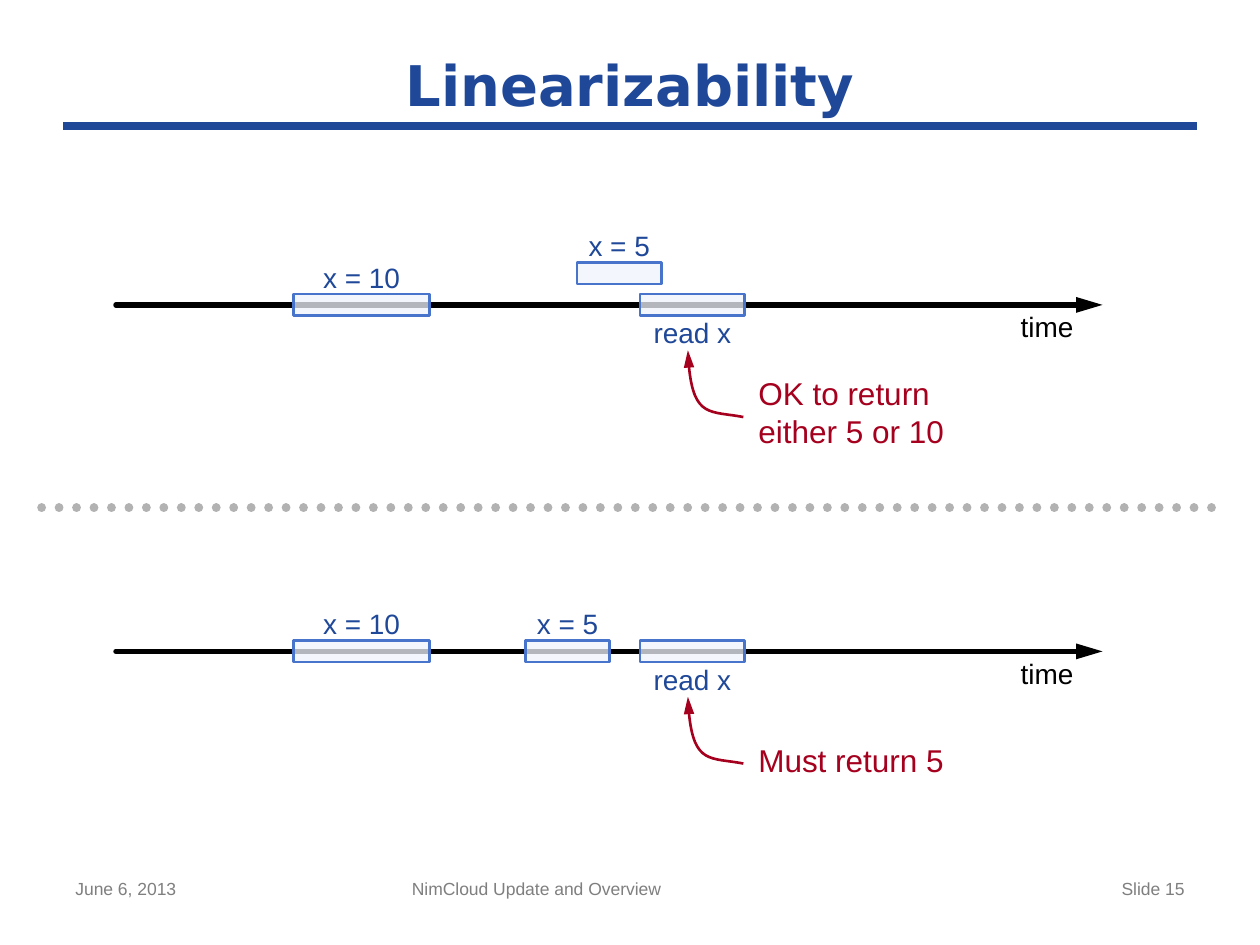
from dataclasses import dataclass

from lxml.etree import SubElement
from pptx import Presentation
from pptx.dml.color import RGBColor
from pptx.enum.dml import MSO_LINE_DASH_STYLE as Dash
from pptx.enum.shapes import MSO_CONNECTOR as Connector, MSO_SHAPE as Shape
from pptx.enum.text import MSO_ANCHOR as Anchor, MSO_AUTO_SIZE as AutoSize, PP_ALIGN as Align
from pptx.oxml.ns import qn
from pptx.util import Inches, Pt


@dataclass(frozen=True)
class Theme:
    blue: str = "1F4899"
    box_line: str = "4974CB"
    box_fill: str = "EFF3FB"
    red: str = "A5001E"
    black: str = "000000"
    dots: str = "B2B2B2"
    footer: str = "7F7F7F"
    title_font: str = "DejaVu Sans"
    body_font: str = "Arial"
    title_size: int = 32
    callout_size: int = 18
    label_size: int = 16
    footer_size: int = 10


@dataclass(frozen=True)
class Operation:
    label: str
    left: float
    width: float
    rise: float = 0
    label_below: bool = False


@dataclass(frozen=True)
class Scenario:
    axis: float
    operations: tuple[Operation, ...]
    verdict: str
    verdict_offset: float
    verdict_height: float


THEME = Theme()
BOX_HEIGHT = 0.17
LABEL_HEIGHT = 0.27
WRITE_10 = Operation("x = 10", 2.33, 1.08)
READ = Operation("read x", 5.08, 0.83, label_below=True)
SCENARIOS = (
    Scenario(2.42, (Operation("x = 5", 4.58, 0.67, rise=0.25), READ, WRITE_10),
             "OK to return\neither 5 or 10", 0.5, 0.75),
    Scenario(5.17, (Operation("x = 5", 4.17, 0.67), READ, WRITE_10),
             "Must return 5", 0.66, 0.42),
)
FOOTERS = (
    ("June 6, 2013", 0.5, 2.33, Align.LEFT),
    ("NimCloud Update and Overview", 3.17, 3.75, Align.LEFT),
    ("Slide 15", 7.17, 2.33, Align.RIGHT),
)


def write_text(shape, text: str, *, size: int, color: str, font: str = THEME.body_font,
               bold: bool = False, align: Align = Align.LEFT, anchor: Anchor = Anchor.TOP,
               wrap: bool = True, tight: bool = False) -> None:
    """Fill a shape with one paragraph per line; tight means no insets and a fitted box."""
    frame = shape.text_frame
    frame.text = text
    frame.word_wrap = wrap
    frame.vertical_anchor = anchor
    frame.auto_size = AutoSize.SHAPE_TO_FIT_TEXT if tight else AutoSize.NONE
    if tight:
        frame.margin_left = frame.margin_right = frame.margin_top = frame.margin_bottom = 0
    for paragraph in frame.paragraphs:
        paragraph.alignment = align
        paragraph.font.name = font
        paragraph.font.size = Pt(size)
        paragraph.font.bold = bold
        paragraph.font.color.rgb = RGBColor.from_string(color)


def add_text(slide, text: str, left: float, top: float, width: float, height: float,
             **text_format) -> None:
    box = slide.shapes.add_textbox(Inches(left), Inches(top), Inches(width), Inches(height))
    write_text(box, text, **text_format)


def style_line(line, color: str, width: float) -> None:
    line.color.rgb = RGBColor.from_string(color)
    line.width = Pt(width)


def add_arrowhead(line) -> None:
    SubElement(line._get_or_add_ln(), qn("a:tailEnd"), type="triangle", w="med", len="lg")


def add_horizontal_line(slide, left: float, right: float, y: float, color: str, width: float):
    connector = slide.shapes.add_connector(
        Connector.STRAIGHT, Inches(left), Inches(y), Inches(right), Inches(y))
    style_line(connector.line, color, width)
    SubElement(connector._element.spPr, qn("a:effectLst"))
    return connector.line


def round_caps(line) -> None:
    line._get_or_add_ln().set("cap", "rnd")


def add_operation(slide, operation: Operation, axis: float) -> None:
    top = axis - BOX_HEIGHT / 2 - operation.rise
    box = slide.shapes.add_shape(Shape.RECTANGLE, Inches(operation.left), Inches(top),
                                 Inches(operation.width), Inches(BOX_HEIGHT))
    box.shadow.inherit = False
    box.fill.solid()
    box.fill.fore_color.rgb = RGBColor.from_string(THEME.box_fill)
    SubElement(box.fill._xPr.find(qn("a:solidFill"))[0], qn("a:alpha"), val="75000")
    style_line(box.line, THEME.box_line, 1.5)
    label_top = top + BOX_HEIGHT if operation.label_below else top - LABEL_HEIGHT
    add_text(slide, operation.label, operation.left, label_top, operation.width, LABEL_HEIGHT,
             size=THEME.label_size, color=THEME.blue, align=Align.CENTER, tight=True)


def add_curved_arrow(slide, axis: float) -> None:
    """Draw one cubic curve from the verdict up to the read label."""
    start, *controls = [(Inches(x), Inches(axis + drop)) for x, drop in
                        ((5.9, 0.89), (5.64, 0.84), (5.48, 0.91), (5.46, 0.36))]
    builder = slide.shapes.build_freeform(*start)
    builder.add_line_segments(controls, close=False)
    arrow = builder.convert_to_shape()
    segments = list(arrow._element.iter(qn("a:lnTo")))
    curve = SubElement(segments[0].getparent(), qn("a:cubicBezTo"))
    for segment in segments:
        curve.append(segment[0])
        segment.getparent().remove(segment)
    arrow.shadow.inherit = False
    arrow.fill.background()
    style_line(arrow.line, THEME.red, 1.5)
    add_arrowhead(arrow.line)


def add_scenario(slide, scenario: Scenario) -> None:
    axis = scenario.axis
    timeline = add_horizontal_line(slide, 0.92, 8.75, axis, THEME.black, 3)
    round_caps(timeline)
    add_arrowhead(timeline)
    add_text(slide, "time", 8.1, axis + 0.04, 0.42, LABEL_HEIGHT, size=THEME.label_size,
             color=THEME.black, wrap=False, tight=True)
    for operation in scenario.operations:
        add_operation(slide, operation, axis)
    add_text(slide, scenario.verdict, 5.92, axis + scenario.verdict_offset, 1.75,
             scenario.verdict_height, size=THEME.callout_size, color=THEME.red)
    add_curved_arrow(slide, axis)


def add_title(slide, text: str) -> None:
    title = slide.shapes.title
    title.left, title.top, title.width, title.height = map(Inches, (0.5, 0.33, 9, 0.67))
    write_text(title, text, size=THEME.title_size, color=THEME.blue, font=THEME.title_font,
               bold=True, align=Align.CENTER, anchor=Anchor.MIDDLE)
    add_horizontal_line(slide, 0.5, 9.5, 1, THEME.blue, 4.5)


def main() -> None:
    presentation = Presentation()
    presentation.slide_width, presentation.slide_height = Inches(10), Inches(7.5)
    slide = presentation.slides.add_slide(presentation.slide_layouts[5])
    add_title(slide, "Linearizability")
    for text, left, width, align in FOOTERS:
        add_text(slide, text, left, 6.92, width, 0.43, size=THEME.footer_size,
                 color=THEME.footer, align=align)
    for scenario in SCENARIOS:
        add_scenario(slide, scenario)
    divider = add_horizontal_line(slide, 0.33, 9.67, 4.03, THEME.dots, 5)
    divider.dash_style = Dash.ROUND_DOT
    round_caps(divider)
    presentation.save("out.pptx")


if __name__ == "__main__":
    main()
